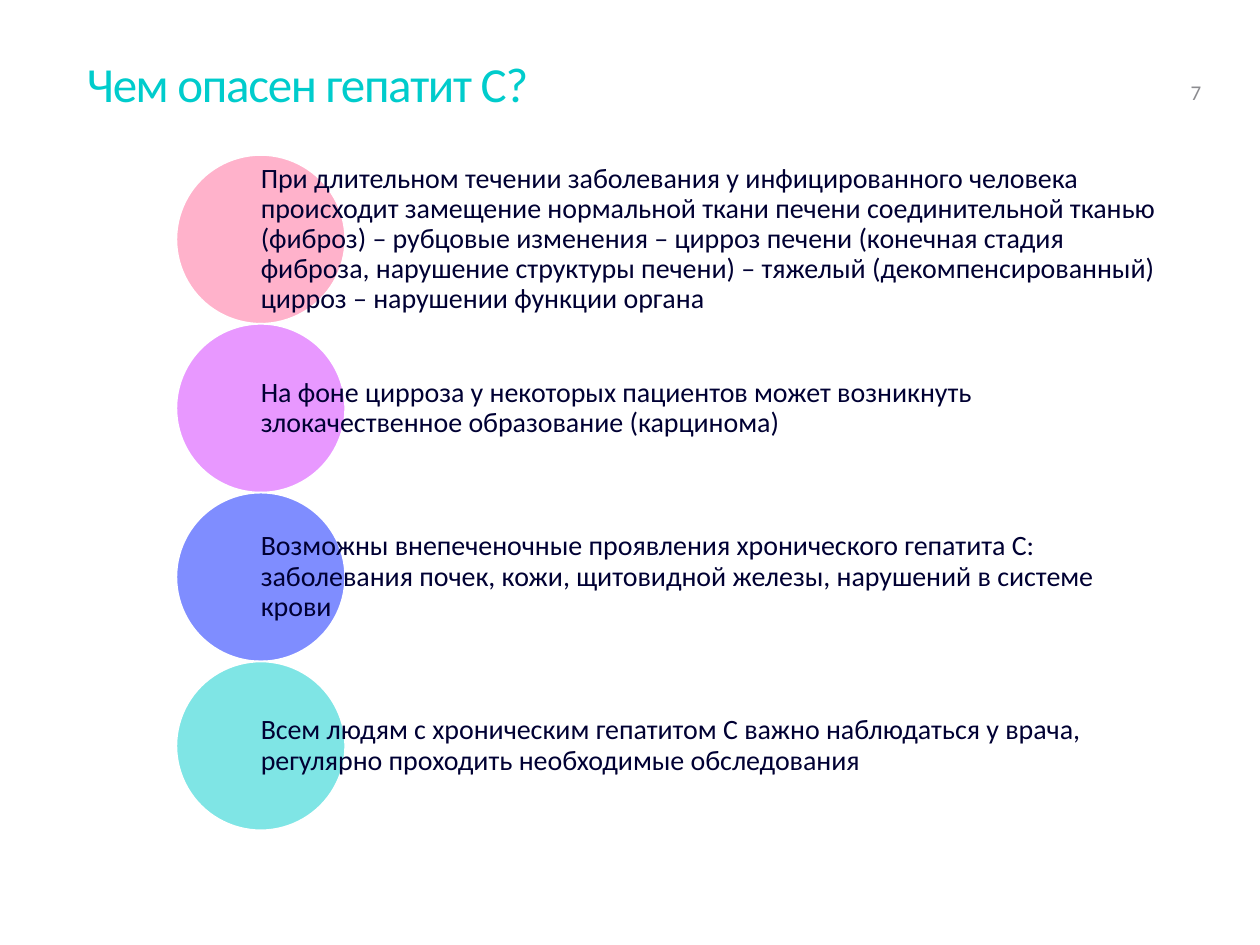
from lxml.etree import SubElement
from pptx import Presentation
from pptx.dml.color import RGBColor
from pptx.enum.shapes import MSO_SHAPE
from pptx.enum.text import MSO_ANCHOR
from pptx.oxml.ns import qn
from pptx.util import Inches, Pt

COLORS = {
    "title": "00CCCC",
    "number": "8C8C90",
    "text": "000033",
    "outline": "FFFFFF",
    "pink": "FF6699",
    "violet": "D233FF",
    "blue": "001CFF",
    "teal": "00CCCC",
}
FONT = "Calibri"
TITLE = "Чем опасен гепатит С?"
PAGE_NUMBER = "7"
DANGERS = [
    ("pink", "При длительном течении заболевания у инфицированного человека происходит "
             "замещение нормальной ткани печени соединительной тканью (фиброз) – рубцовые "
             "изменения – цирроз печени (конечная стадия фиброза, нарушение структуры печени) – "
             "тяжелый (декомпенсированный) цирроз – нарушении функции органа"),
    ("violet", "На фоне цирроза у некоторых пациентов может возникнуть злокачественное "
               "образование (карцинома)"),
    ("blue", "Возможны внепеченочные проявления хронического гепатита С: заболевания почек, "
             "кожи, щитовидной железы, нарушений в системе крови"),
    ("teal", "Всем людям с хроническим гепатитом С важно наблюдаться у врача, регулярно "
             "проходить необходимые обследования"),
]
WIDTH, HEIGHT = 10, 7.5
LIST_LEFT, LIST_TOP, LIST_RIGHT = 1.4, 1.23, 9.2
DIAMETER = 1.34


def color(name):
    return RGBColor.from_string(COLORS[name])


def add_text(slide, text, box, size, color_name, anchor, margin, line_spacing=None):
    shape = slide.shapes.add_textbox(*map(Inches, box))
    frame = shape.text_frame
    frame.word_wrap = True
    frame.vertical_anchor = anchor
    frame.margin_left = frame.margin_right = 0
    frame.margin_top = frame.margin_bottom = Inches(margin)
    paragraph = frame.paragraphs[0]
    paragraph.text = text
    paragraph.line_spacing = line_spacing
    paragraph.font.name = FONT
    paragraph.font.size = Pt(size)
    paragraph.font.color.rgb = color(color_name)
    return paragraph


def add_circle(slide, left, top, color_name):
    shape = slide.shapes.add_shape(
        MSO_SHAPE.OVAL, *map(Inches, (left, top, DIAMETER, DIAMETER)))
    shape.shadow.inherit = False
    shape.fill.solid()
    shape.fill.fore_color.rgb = color(color_name)
    fill_color = shape.fill._xPr.find(qn("a:solidFill"))[0]
    SubElement(fill_color, qn("a:alpha"), val="50000")
    shape.line.color.rgb = color("outline")
    shape.line.width = Pt(1)


def main():
    presentation = Presentation()
    presentation.slide_width, presentation.slide_height = Inches(WIDTH), Inches(HEIGHT)
    slide = presentation.slides.add_slide(presentation.slide_layouts[6])

    title = add_text(slide, TITLE, (0.69, 0.4, 8.62, 1.03), 28, "title",
                     MSO_ANCHOR.TOP, 0.05, Pt(32))
    title.runs[0].font._element.set("spc", "-70")
    add_text(slide, PAGE_NUMBER, (9.45, 0.4, 0.38, 0.47), 12, "number",
             MSO_ANCHOR.BOTTOM, 0.04)

    text_left = LIST_LEFT + DIAMETER / 2
    for row, (color_name, text) in enumerate(DANGERS):
        top = LIST_TOP + row * DIAMETER
        add_circle(slide, LIST_LEFT, top, color_name)
        add_text(slide, text, (text_left, top, LIST_RIGHT - text_left, DIAMETER),
                 16, "text", MSO_ANCHOR.MIDDLE, 0.02, 0.9)

    presentation.save("out.pptx")


if __name__ == "__main__":
    main()
